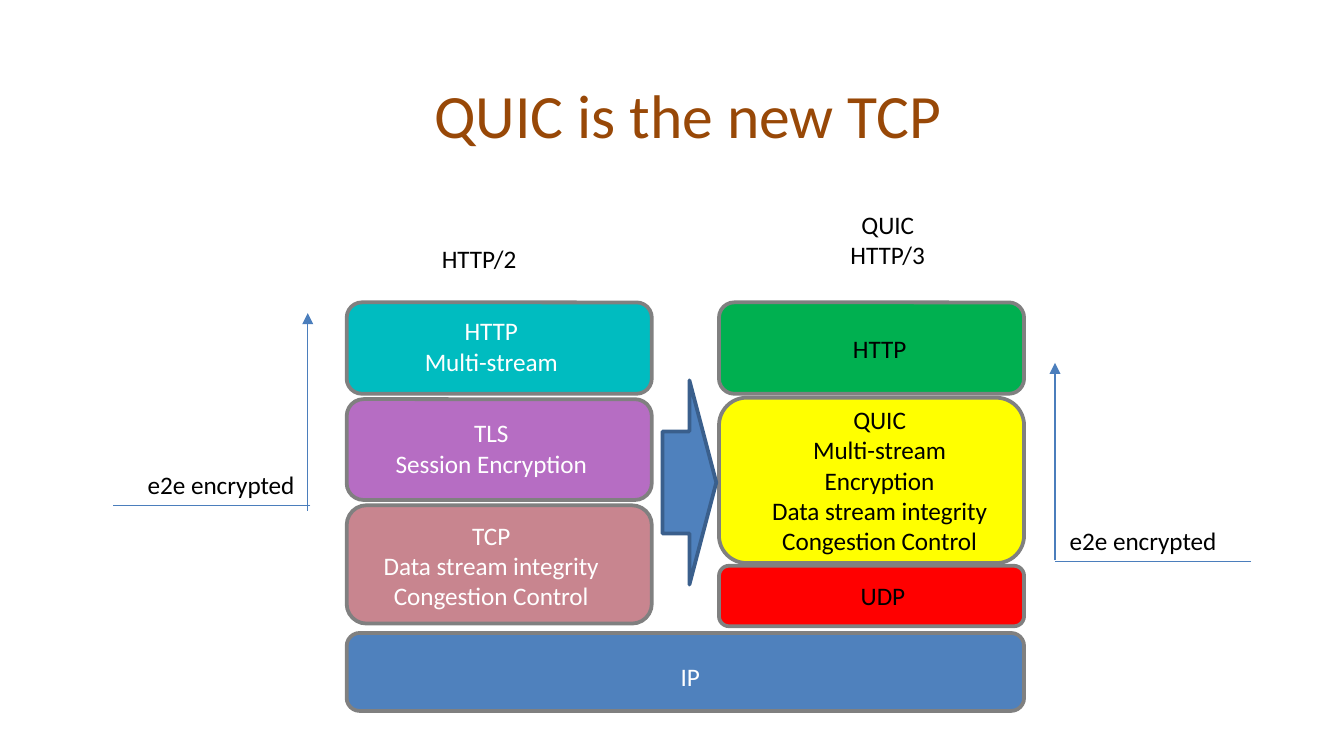
from dataclasses import dataclass

import lxml.etree
import pptx
import pptx.dml.color
import pptx.enum.shapes
import pptx.enum.text
import pptx.oxml.ns
import pptx.shapes.autoshape
import pptx.slide
import pptx.util

Inches = pptx.util.Inches
Pt = pptx.util.Pt
Shapes = pptx.enum.shapes.MSO_SHAPE
Anchor = pptx.enum.text.MSO_ANCHOR


@dataclass(frozen=True)
class Theme:
    font: str = "Calibri"
    title_size: float = 33
    label_size: float = 13.5
    outline_width: float = 2
    guide_width: float = 0.75
    title: str = "984807"
    dark: str = "000000"
    light: str = "FFFFFF"
    outline: str = "808080"
    blue: str = "4F81BD"
    arrow_outline: str = "3A5F8C"
    guide: str = "4B7EBC"
    teal: str = "00BCC0"
    purple: str = "B66DC3"
    rose: str = "C8858F"
    green: str = "00B050"
    yellow: str = "FFFF00"
    red: str = "FF0000"


THEME = Theme()


@dataclass(frozen=True)
class Layer:
    left: float
    top: float
    width: float
    height: float
    fill: str


@dataclass(frozen=True)
class Label:
    lines: tuple[str, ...]
    left: float
    top: float
    width: float
    color: str = THEME.dark


@dataclass(frozen=True)
class Guide:
    start: tuple[float, float]
    end: tuple[float, float]
    arrow: bool = False


# Protocol stacks: two columns standing on a shared IP layer
HTTP2_LEFT, HTTP3_LEFT, STACK_WIDTH = 2.58, 5.35, 2.27
IP_WIDTH = HTTP3_LEFT + STACK_WIDTH - HTTP2_LEFT
LAYERS = (
    Layer(HTTP2_LEFT, 4.71, IP_WIDTH, 0.58, THEME.blue),
    Layer(HTTP2_LEFT, 3.76, STACK_WIDTH, 0.88, THEME.rose),
    Layer(HTTP2_LEFT, 2.97, STACK_WIDTH, 0.75, THEME.purple),
    Layer(HTTP2_LEFT, 2.25, STACK_WIDTH, 0.68, THEME.teal),
    Layer(HTTP3_LEFT, 2.25, STACK_WIDTH, 0.68, THEME.green),
    Layer(HTTP3_LEFT, 4.21, STACK_WIDTH, 0.45, THEME.red),
    Layer(HTTP3_LEFT, 2.96, STACK_WIDTH, 1.23, THEME.yellow),
)
TRANSPORT = ("Data stream integrity", "Congestion Control")
LABELS = (
    Label(("HTTP", "Multi-stream"), 3.05, 2.3, 1.21, THEME.light),
    Label(("TLS", "Session Encryption"), 2.83, 3.06, 1.65, THEME.light),
    Label(("TCP", *TRANSPORT), 2.74, 3.82, 1.83, THEME.light),
    Label(("HTTP",), 6.24, 2.43, 0.61),
    Label(("QUIC", "Multi-stream", "Encryption", *TRANSPORT), 5.63, 2.96, 1.83),
    Label(("UDP",), 6.3, 4.27, 0.54),
    Label(("IP",), 4.96, 4.87, 0.35, THEME.light),
    Label(("HTTP/2",), 3.18, 1.76, 0.77),
    Label(("QUIC", "HTTP/3"), 6.22, 1.51, 0.77),
    Label(("e2e encrypted",), 0.99, 3.44, 1.31),
    Label(("e2e encrypted",), 7.85, 3.86, 1.31),
)
# Reach of end-to-end encryption on either side
GUIDES = (
    Guide((2.31, 3.76), (0.84, 3.76)),
    Guide((9.31, 4.18), (7.85, 4.18)),
    Guide((2.29, 3.8), (2.29, 2.33), arrow=True),
    Guide((7.85, 4.17), (7.85, 2.7), arrow=True),
)


def rgb(color: str) -> pptx.dml.color.RGBColor:
    return pptx.dml.color.RGBColor.from_string(color)


def add_block(slide: pptx.slide.Slide, kind: Shapes, block: Layer, outline: str) -> None:
    shape = slide.shapes.add_shape(
        kind, Inches(block.left), Inches(block.top), Inches(block.width), Inches(block.height)
    )
    shape.shadow.inherit = False
    shape.fill.solid()
    shape.fill.fore_color.rgb = rgb(block.fill)
    shape.line.color.rgb = rgb(outline)
    shape.line.width = Pt(THEME.outline_width)


def add_text(
    slide: pptx.slide.Slide, label: Label, height: float, size: float, anchor: Anchor
) -> pptx.shapes.autoshape.Shape:
    box = slide.shapes.add_textbox(
        Inches(label.left), Inches(label.top), Inches(label.width), Inches(height)
    )
    frame = box.text_frame
    frame.word_wrap = False
    frame.vertical_anchor = anchor
    frame.text = "\n".join(label.lines)
    for paragraph in frame.paragraphs:
        paragraph.alignment = pptx.enum.text.PP_ALIGN.CENTER
        paragraph.font.name = THEME.font
        paragraph.font.size = Pt(size)
        paragraph.font.color.rgb = rgb(label.color)
    return box


def add_label(slide: pptx.slide.Slide, label: Label) -> None:
    height = 0.1 + 0.23 * len(label.lines)
    box = add_text(slide, label, height, THEME.label_size, Anchor.TOP)
    box.text_frame.auto_size = pptx.enum.text.MSO_AUTO_SIZE.SHAPE_TO_FIT_TEXT


def add_guide(slide: pptx.slide.Slide, guide: Guide) -> None:
    line = slide.shapes.add_connector(
        pptx.enum.shapes.MSO_CONNECTOR.STRAIGHT,
        *(Inches(value) for value in (*guide.start, *guide.end)),
    )
    line.line.color.rgb = rgb(THEME.guide)
    line.line.width = Pt(THEME.guide_width)
    qn = pptx.oxml.ns.qn
    properties = line._element.spPr
    if guide.arrow:
        outline = properties.find(qn("a:ln"))
        lxml.etree.SubElement(outline, qn("a:tailEnd"), type="triangle")
    lxml.etree.SubElement(properties, qn("a:effectLst"))


def main() -> None:
    deck = pptx.Presentation()
    deck.slide_width = Inches(10)
    deck.slide_height = Inches(10 * 9 / 16)
    slide = deck.slides.add_slide(deck.slide_layouts[6])

    # Stacks and title
    for layer in LAYERS:
        add_block(slide, Shapes.ROUNDED_RECTANGLE, layer, THEME.outline)
    title = Label(("QUIC is the new TCP",), 0.69, 0.3, 8.86, THEME.title)
    add_text(slide, title, 1.09, THEME.title_size, Anchor.MIDDLE)

    # Transition from HTTP/2 to HTTP/3
    transition = Layer(4.93, 2.83, 0.4, 1.52, THEME.blue)
    add_block(slide, Shapes.RIGHT_ARROW, transition, THEME.arrow_outline)

    # Encryption guides and all labels
    for guide in GUIDES:
        add_guide(slide, guide)
    for label in LABELS:
        add_label(slide, label)

    deck.save("out.pptx")


if __name__ == "__main__":
    main()
